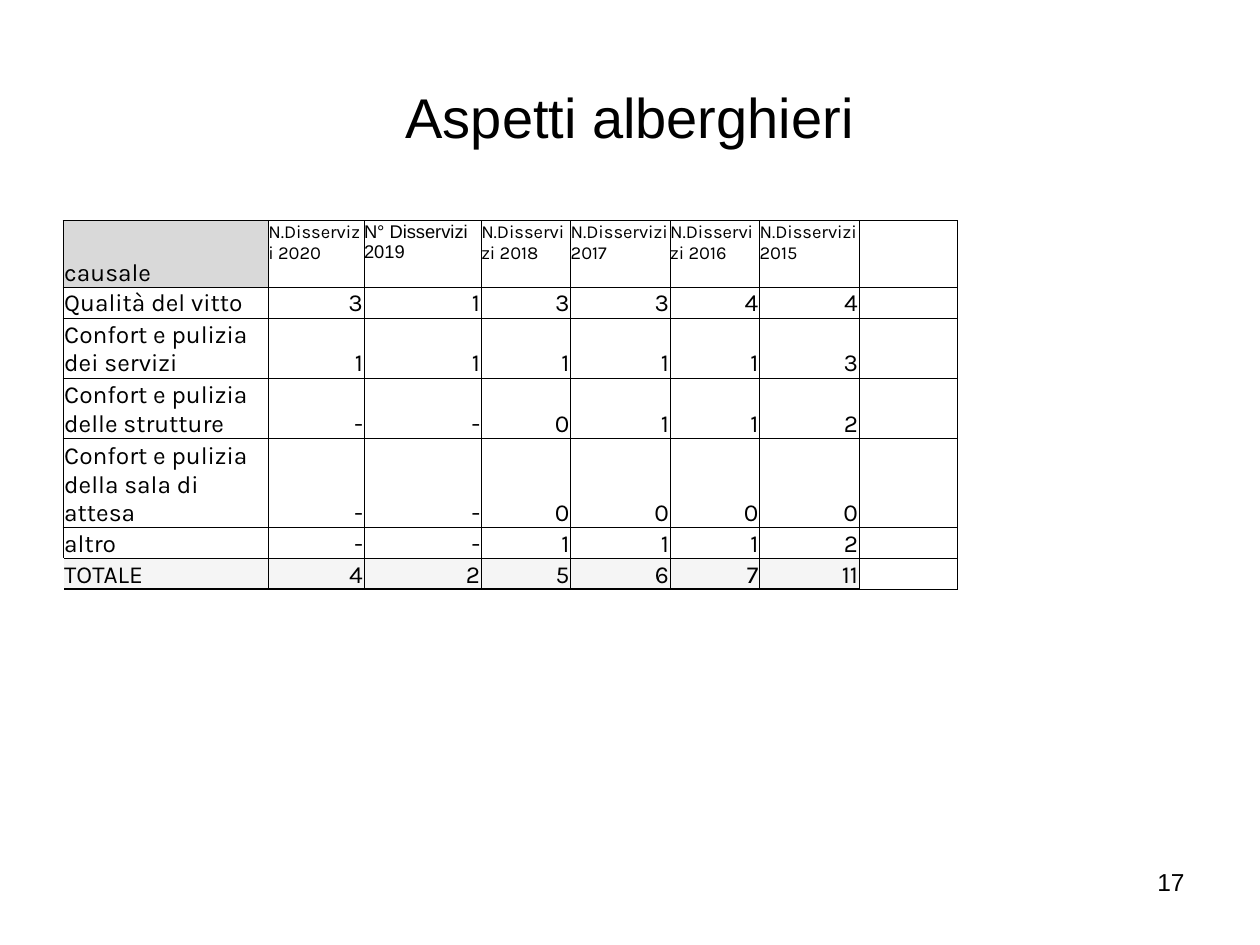
"""Build the slide "Aspetti alberghieri" with its table of service failures."""
from lxml import etree
from pptx import Presentation
from pptx.dml.color import RGBColor
from pptx.enum.text import MSO_ANCHOR, PP_ALIGN
from pptx.oxml.ns import qn
from pptx.util import Inches, Pt

LEFT, CENTER, RIGHT = PP_ALIGN.LEFT, PP_ALIGN.CENTER, PP_ALIGN.RIGHT
TOP, MIDDLE, BOTTOM = MSO_ANCHOR.TOP, MSO_ANCHOR.MIDDLE, MSO_ANCHOR.BOTTOM
BLACK = RGBColor(0x00, 0x00, 0x00)
WHITE = RGBColor(0xFF, 0xFF, 0xFF)
HEADER_GRAY = RGBColor(0xD9, 0xD9, 0xD9)
TOTAL_GRAY = RGBColor(0xF5, 0xF5, 0xF5)

COLUMN_WIDTHS = [1.63, 0.76, 0.93, 0.71, 0.79, 0.71, 0.79, 0.78]
ROW_HEIGHTS = [0.53, 0.24, 0.46, 0.46, 0.69, 0.24, 0.24]
ROWS = [
    ["causale", "N.Disservizi 2020", "N° Disservizi\n2019", "N.Disservizi 2018",
     "N.Disservizi 2017", "N.Disservizi 2016", "N.Disservizi 2015", ""],
    ["Qualità del vitto", "3", "1", "3", "3", "4", "4", ""],
    ["Confort e pulizia dei servizi", "1", "1", "1", "1", "1", "3", ""],
    ["Confort e pulizia delle strutture", "-", "-", "0", "1", "1", "2", ""],
    ["Confort e pulizia della sala di attesa", "-", "-", "0", "0", "0", "0", ""],
    ["altro", "-", "-", "1", "1", "1", "2", ""],
    ["TOTALE", "4", "2", "5", "6", "7", "11", ""],
]
TOTAL_ROW = len(ROWS) - 1
EMPTY_COLUMN = len(COLUMN_WIDTHS) - 1


def write_text(text_frame, text, font_name, size, alignment):
    text_frame.text = text
    for paragraph in text_frame.paragraphs:
        paragraph.alignment = alignment
        for run in paragraph.runs:
            run.font.color.rgb = BLACK
            for name, value in {"name": font_name, "size": Pt(size)}.items():
                setattr(run.font, name, value)
        if not text:
            etree.SubElement(paragraph._p, qn("a:endParaRPr"), sz=str(size * 100))


def add_border(cell, side, width):
    line = etree.Element(qn(f"a:ln{side}"), w=str(Pt(width)))
    fill = etree.SubElement(line, qn("a:solidFill"))
    etree.SubElement(fill, qn("a:srgbClr"), val=str(BLACK))
    cell._tc.get_or_add_tcPr().append(line)


presentation = Presentation()
presentation.slide_width = Inches(10)
presentation.slide_height = Inches(7.5)
slide = presentation.slides.add_slide(presentation.slide_layouts[6])

TEXT_BOXES = [
    ("Aspetti alberghieri", (0.5, 0.3, 9, 1.25), 32, CENTER, MIDDLE),
    ("17", (7.17, 6.83, 2.33, 0.52), 14, RIGHT, TOP),
]
for text, box, size, alignment, anchor in TEXT_BOXES:
    shape = slide.shapes.add_textbox(*map(Inches, box))
    shape.text_frame.word_wrap = True
    shape.text_frame.vertical_anchor = anchor
    write_text(shape.text_frame, text, "Arial", size, alignment)

table = slide.shapes.add_table(
    len(ROWS), len(COLUMN_WIDTHS), Inches(0.5), Inches(1.75),
    Inches(sum(COLUMN_WIDTHS)), Inches(sum(ROW_HEIGHTS))).table
table.first_row = False
table.horz_banding = False
for column, width in zip(table.columns, COLUMN_WIDTHS):
    column.width = Inches(width)
for row, height in zip(table.rows, ROW_HEIGHTS):
    row.height = Inches(height)

for row_index, row_texts in enumerate(ROWS):
    for column_index, text in enumerate(row_texts):
        cell = table.cell(row_index, column_index)
        year_header = row_index == 0 and column_index > 0
        empty = column_index == EMPTY_COLUMN
        side_margin = 0 if year_header else 0.01
        cell_format = {
            "vertical_anchor": TOP if year_header else BOTTOM,
            "margin_left": Inches(side_margin),
            "margin_right": Inches(side_margin),
            "margin_top": Inches(0.01),
            "margin_bottom": Inches(0),
        }
        for name, value in cell_format.items():
            setattr(cell, name, value)

        font_name = "Arial" if year_header and column_index == 2 else "Karla"
        size = 10 if empty else 10.5 if year_header else 14
        alignment = LEFT if row_index == 0 or column_index == 0 else RIGHT
        write_text(cell.text_frame, text, font_name, size, alignment)

        total = row_index == TOTAL_ROW and not empty
        above_total = row_index == TOTAL_ROW - 1 and not empty
        borders = {"L": 0.5, "R": 0.5, "T": 1 if total else 0.5,
                   "B": 1 if total or above_total else 0.5}
        if total and column_index == 0:
            del borders["L"]
        for side, width in borders.items():
            add_border(cell, side, width)

        header_corner = row_index == 0 and column_index == 0
        cell.fill.solid()
        cell.fill.fore_color.rgb = (
            HEADER_GRAY if header_corner else TOTAL_GRAY if total else WHITE)

presentation.save("out.pptx")
